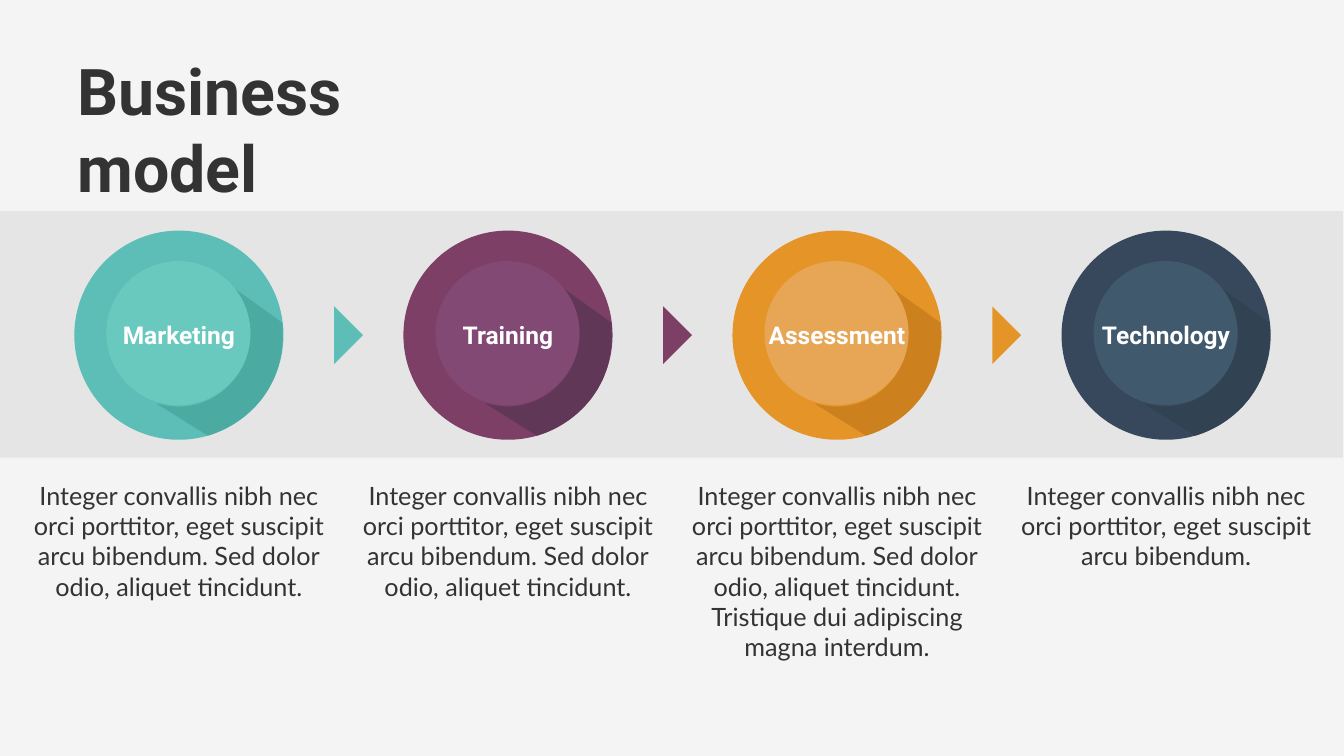
from dataclasses import dataclass
from typing import Optional

from lxml.etree import SubElement
from pptx import Presentation
from pptx.dml.color import RGBColor
from pptx.enum.shapes import MSO_SHAPE as Shape
from pptx.enum.text import MSO_ANCHOR as Anchor, PP_ALIGN as Align
from pptx.oxml.ns import qn
from pptx.util import Inches, Pt

BACKGROUND = RGBColor(0xF4, 0xF4, 0xF4)
BAND = RGBColor(0x26, 0x26, 0x26)
TEXT = RGBColor(0x33, 0x33, 0x33)
WHITE = RGBColor(0xFF, 0xFF, 0xFF)

# Layout in inches
FIRST_CENTER, COLUMN_PITCH, CENTER_Y = 3.55, 6.53, 6.65
OUTER_SIZE, INNER_SIZE = 4.15, 2.86
INNER_SHIFT_X, INNER_SHIFT_Y = -0.01, -0.04
ARROW_OFFSET, ARROW_SIZE = 3.08, 0.81
LABEL_TOP, LABEL_WIDTH, LABEL_HEIGHT = 6.3, 3.1, 0.69
BODY_TOP, BODY_WIDTH, LINE_HEIGHT = 9.53, 5.81, 0.61


@dataclass
class Step:
    label: str
    outer: RGBColor
    inner: RGBColor
    shade: RGBColor
    shade_alpha: Optional[int]
    lines: list[str]


INTRO = ["Integer convallis nibh nec", "orci porttitor, eget suscipit"]
LONGER = INTRO + ["arcu bibendum. Sed dolor", "odio, aliquet tincidunt."]

STEPS = [
    Step("Marketing", RGBColor(0x5C, 0xBE, 0xB6), RGBColor(0x69, 0xC9, 0xBF),
         RGBColor(0x3C, 0x97, 0x90), 50, LONGER),
    Step("Training", RGBColor(0x7D, 0x3F, 0x65), RGBColor(0x81, 0x49, 0x74),
         RGBColor(0x61, 0x37, 0x57), None, LONGER),
    Step("Assessment", RGBColor(0xE5, 0x94, 0x28), RGBColor(0xE7, 0xA5, 0x56),
         RGBColor(0xB4, 0x70, 0x16), 50,
         LONGER + ["Tristique dui adipiscing", "magna interdum."]),
    Step("Technology", RGBColor(0x37, 0x48, 0x5D), RGBColor(0x41, 0x59, 0x6D),
         RGBColor(0x31, 0x43, 0x52), None, INTRO + ["arcu bibendum."]),
]


def paint(shape, color: RGBColor, alpha: Optional[int] = None) -> None:
    shape.shadow.inherit = False
    shape.line.fill.background()
    shape.fill.solid()
    shape.fill.fore_color.rgb = color
    if alpha is not None:
        color_element = shape.fill._xPr.find(qn("a:solidFill"))[0]
        SubElement(color_element, qn("a:alpha"), val=str(alpha * 1000))


def curve(p0, p1, p2, p3, steps: int = 16) -> list[tuple[float, float]]:
    """Points on a cubic Bezier curve, without its start."""
    points = []
    for i in range(1, steps + 1):
        t = i / steps
        u = 1 - t
        points.append(tuple(u**3 * a + 3 * u * u * t * b + 3 * u * t * t * c + t**3 * d
                            for a, b, c, d in zip(p0, p1, p2, p3)))
    return points


# Long shadow outline, measured from the corner of the outer circle's box
SHADOW = [
    (3.14, 1.12), (4.13, 1.83),
    *curve((4.13, 1.83), (4.27, 3.65), (2.65, 4.07), (2.65, 4.07)),
    (1.64, 3.44), (1.65, 3.43),
    *curve((1.65, 3.43), (2.14, 3.58), (2.69, 3.46), (3.07, 3.07)),
    *curve((3.07, 3.07), (3.6, 2.55), (3.63, 1.72), (3.17, 1.16)),
]


def add_circle(shapes, center_x: float, center_y: float, size: float,
               color: RGBColor) -> None:
    circle = shapes.add_shape(Shape.OVAL, Inches(center_x - size / 2),
                              Inches(center_y - size / 2), Inches(size), Inches(size))
    paint(circle, color)


def add_badge(slide, step: Step, center: float) -> None:
    shapes = slide.shapes.add_group_shape().shapes
    add_circle(shapes, center, CENTER_Y, OUTER_SIZE, step.outer)
    left, top = center - OUTER_SIZE / 2, CENTER_Y - OUTER_SIZE / 2
    points = [(Inches(left + x), Inches(top + y)) for x, y in SHADOW]
    builder = shapes.build_freeform(*points[0])
    builder.add_line_segments(points[1:], close=True)
    paint(builder.convert_to_shape(), step.shade, step.shade_alpha)
    add_circle(shapes, center + INNER_SHIFT_X, CENTER_Y + INNER_SHIFT_Y,
               INNER_SIZE, step.inner)


def add_arrow(slide, center: float, color: RGBColor) -> None:
    arrow = slide.shapes.add_shape(
        Shape.RIGHT_TRIANGLE, Inches(center - ARROW_SIZE / 2),
        Inches(CENTER_Y - ARROW_SIZE / 2), Inches(ARROW_SIZE), Inches(ARROW_SIZE))
    arrow.rotation = 225
    paint(arrow, color)


def add_text(slide, center: float, top: float, width: float, height: float,
             lines: list[str], font_name: str, size: int, color: RGBColor,
             bold: bool = False, inset: float = 0,
             anchor: Anchor = Anchor.TOP) -> None:
    box = slide.shapes.add_textbox(Inches(center - width / 2), Inches(top),
                                   Inches(width), Inches(height))
    frame = box.text_frame
    frame.word_wrap = True
    frame.vertical_anchor = anchor
    frame.margin_left = frame.margin_right = Inches(inset)
    frame.margin_top = frame.margin_bottom = Inches(inset)
    frame.text = "\n".join(lines)
    for paragraph in frame.paragraphs:
        paragraph.alignment = Align.CENTER
        font = paragraph.font
        font.name, font.size, font.bold = font_name, Pt(size), bold
        font.color.rgb = color


def add_title(slide, text: str) -> None:
    title = slide.shapes.title
    title.left, title.top = Inches(1.44), Inches(0.96)
    title.width, title.height = Inches(9.22), Inches(1.65)
    frame = title.text_frame
    frame.text = text
    frame.word_wrap = True
    frame.vertical_anchor = Anchor.TOP
    frame.margin_left, frame.margin_right = Inches(0.1), Inches(0.5)
    frame.margin_top = frame.margin_bottom = Inches(0.05)
    paragraph = frame.paragraphs[0]
    paragraph.alignment = Align.LEFT
    paragraph.line_spacing = 1.0
    font = paragraph.font
    font.name, font.size, font.bold = "Roboto", Pt(92), True
    font.color.rgb = TEXT


def main() -> None:
    presentation = Presentation()
    presentation.slide_width, presentation.slide_height = Inches(26.67), Inches(15)
    slide = presentation.slides.add_slide(presentation.slide_layouts[5])
    slide.background.fill.solid()
    slide.background.fill.fore_color.rgb = BACKGROUND

    # Band and title
    band = slide.shapes.add_shape(Shape.RECTANGLE, Inches(0), Inches(4.19),
                                  Inches(26.65), Inches(4.89))
    paint(band, BAND, 7)
    add_title(slide, "Business model")

    # Steps, with an arrow to the next one
    for index, step in enumerate(STEPS):
        center = FIRST_CENTER + index * COLUMN_PITCH
        add_badge(slide, step, center)
        if index < len(STEPS) - 1:
            add_arrow(slide, center + ARROW_OFFSET, step.outer)
        add_text(slide, center, LABEL_TOP, LABEL_WIDTH, LABEL_HEIGHT, [step.label],
                 "Roboto", 35, WHITE, bold=True, inset=0.06, anchor=Anchor.MIDDLE)
        add_text(slide, center, BODY_TOP, BODY_WIDTH,
                 len(step.lines) * LINE_HEIGHT + 0.11, step.lines, "Lato", 36, TEXT)

    presentation.save("out.pptx")


if __name__ == "__main__":
    main()
